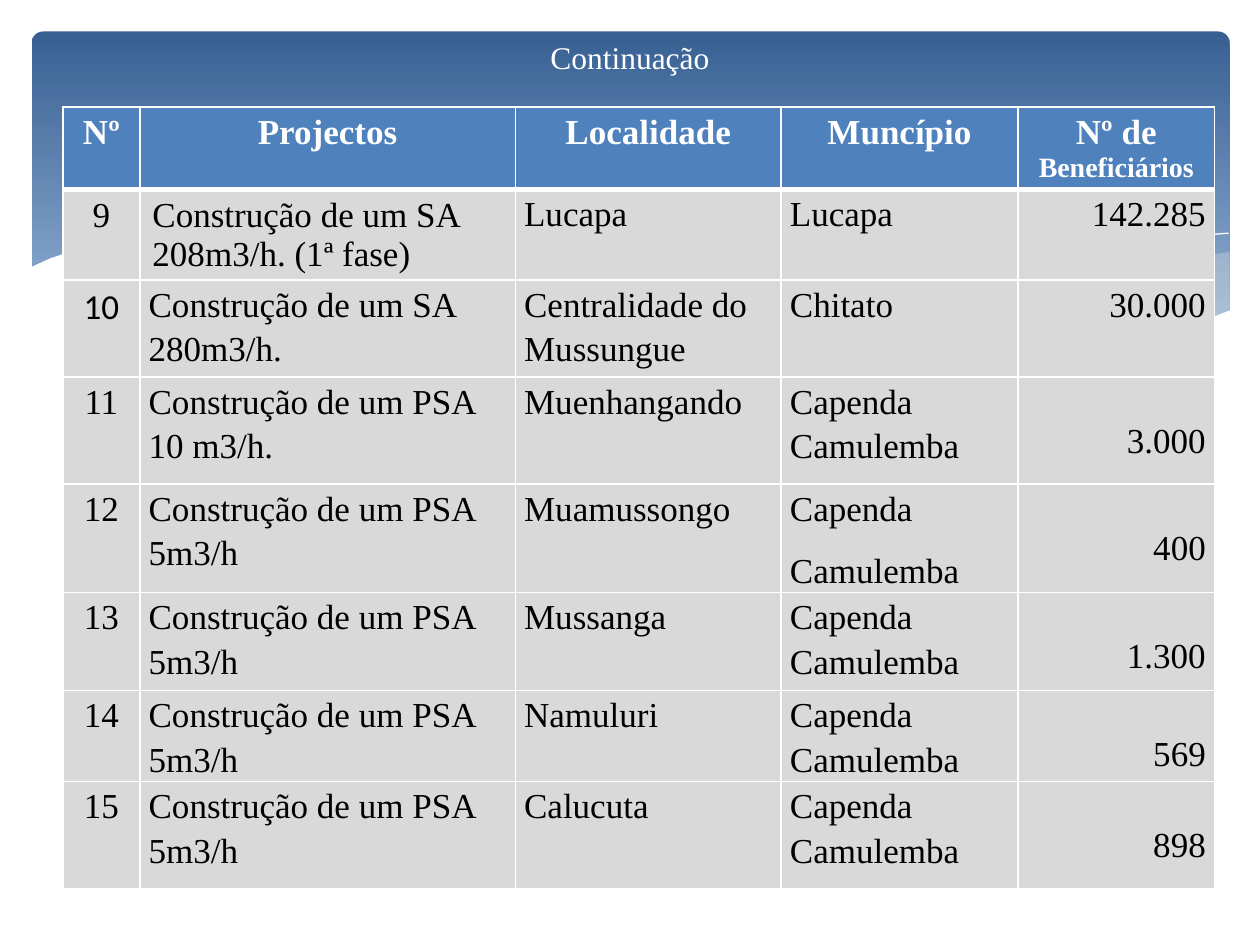
from dataclasses import dataclass

from lxml import etree
from pptx import Presentation
from pptx.dml.color import RGBColor
from pptx.enum.shapes import MSO_SHAPE
from pptx.enum.text import MSO_ANCHOR, PP_ALIGN
from pptx.oxml.ns import qn
from pptx.util import Inches, Pt

ROUND = MSO_SHAPE.ROUNDED_RECTANGLE
TOP = MSO_ANCHOR.TOP
LEFT, MID, RIGHT, JUST = PP_ALIGN.LEFT, PP_ALIGN.CENTER, PP_ALIGN.RIGHT, PP_ALIGN.JUSTIFY

WHITE = RGBColor(0xFF, 0xFF, 0xFF)
BLACK = RGBColor(0, 0, 0)
NAVY = RGBColor(0x37, 0x60, 0x92)
SKY = RGBColor(0x95, 0xB3, 0xD7)
BLUE = RGBColor(0x4F, 0x81, 0xBD)
GRAY = RGBColor(0xD9, 0xD9, 0xD9)
CREAM = RGBColor(0xEE, 0xEC, 0xE1)
SERIF = "Times New Roman"


@dataclass
class Wave:
    points: list
    fill: RGBColor | None = None
    alpha: int = 100


@dataclass
class Work:
    code: str
    name: str
    place: str
    town: str
    count: str
    drop: float = 0.31
    font: str = SERIF
    gap: int = 0


WAVES = [
    Wave([(9.75, 2), (9.48, 2.04), (9.21, 2.1), (8.91, 2.16), (8.61, 2.23), (8.05, 2.37),
          (7.53, 2.48), (7.06, 2.57), (6.61, 2.65), (6.91, 2.69), (7.19, 2.72), (7.45, 2.75),
          (7.69, 2.77), (8.03, 2.78), (8.35, 2.77), (8.63, 2.75), (8.89, 2.72), (9.13, 2.67),
          (9.35, 2.62), (9.49, 2.57), (9.63, 2.52), (9.76, 2.47), (9.76, 2)], CREAM, 29),
    Wave([(8.93, 2.73), (8.66, 2.69), (8.37, 2.65), (8.07, 2.6), (7.75, 2.54), (7.41, 2.47),
          (7.06, 2.4), (6.68, 2.31), (6.29, 2.22), (5.98, 2.14), (5.69, 2.08), (5.41, 2.03),
          (5.14, 1.98), (4.89, 1.94), (4.42, 1.89), (3.99, 1.86), (3.61, 1.85), (3.28, 1.87),
          (2.86, 1.91), (3.23, 1.96), (3.62, 2.03), (4.04, 2.11), (4.49, 2.22), (4.91, 2.32),
          (5.3, 2.4), (5.66, 2.48), (6.01, 2.55), (6.34, 2.61), (6.65, 2.66), (6.95, 2.7),
          (7.22, 2.74), (7.48, 2.76), (7.73, 2.77), (8.07, 2.78), (8.38, 2.78), (8.67, 2.76)],
         CREAM, 40),
    Wave([(3.09, 1.95), (3.28, 1.92), (3.53, 1.89), (3.87, 1.87), (4.33, 1.87), (4.69, 1.89),
          (5.1, 1.92), (5.56, 1.97), (6.08, 2.04), (6.65, 2.13), (7.27, 2.26), (7.95, 2.41),
          (8.69, 2.61), (9.07, 2.72)]),
    Wave([(6.13, 2.57), (6.53, 2.46), (6.95, 2.35), (7.48, 2.23), (8.06, 2.1), (8.66, 1.99),
          (8.95, 1.94), (9.24, 1.9), (9.51, 1.87), (9.75, 1.85)]),
    Wave([(9.77, 2.46), (9.59, 2.53), (9.4, 2.59), (9.2, 2.65), (8.99, 2.69), (8.75, 2.73),
          (8.5, 2.75), (8.09, 2.77), (7.78, 2.76), (7.44, 2.74), (7.08, 2.7), (6.68, 2.65),
          (6.26, 2.58), (5.79, 2.5), (5.29, 2.39), (4.75, 2.27), (4.18, 2.13), (3.65, 2.02),
          (3.16, 1.94), (2.71, 1.88), (2.3, 1.85), (1.93, 1.84), (1.61, 1.84), (1.32, 1.86),
          (1.06, 1.89), (0.85, 1.93), (0.67, 1.97), (0.52, 2.01), (0.4, 2.05), (0.29, 2.1),
          (0.23, 2.13), (0.23, 3.29), (9.77, 3.29)], WHITE),
]

HEADS = [[("Nº", 20)], [("Projectos", 20)], [("Localidade", 20)], [("Muncípio", 20)],
         [("Nº de ", 20), ("Beneficiários", 16)]]
PSA = "Construção de um PSA 5m3/h"
CAPENDA = "Capenda Camulemba"
WORKS = [
    Work("9", "Construção de um SA 208m3/h. (1ª fase)", "Lucapa", "Lucapa", "142.285", 0),
    Work("10", "Construção de um SA 280m3/h.", "Centralidade do\nMussungue", "Chitato",
         "30.000", 0, "Calibri"),
    Work("11", "Construção de um PSA 10 m3/h.", "Muenhangando", CAPENDA, "3.000"),
    Work("12", PSA, "Muamussongo", "Capenda\nCamulemba", "400", gap=10),
    Work("13", PSA, "Mussanga", CAPENDA, "1.300"),
    Work("14", PSA, "Namuluri", CAPENDA, "569"),
    Work("15", PSA, "Calucuta", CAPENDA, "898"),
]
COLS = [0.61, 2.98, 2.11, 1.88, 1.56]
ROWS = [0.65, 0.67, 0.77, 0.85, 0.86, 0.78, 0.72, 0.85]


def add_panel(shapes) -> None:
    panel = shapes.add_shape(ROUND, Inches(0.25), Inches(0.25), Inches(9.51), Inches(2.7))
    panel.adjustments[0] = 0.034
    panel.shadow.inherit = False
    panel.line.fill.background()
    panel.fill.gradient()
    panel.fill.gradient_angle = 270
    for stop, color, place in zip(panel.fill.gradient_stops, (NAVY, SKY), (0, 0.9)):
        stop.color.rgb = color
        stop.position = place


def add_wave(shapes, wave: Wave) -> None:
    dots = [(Inches(x), Inches(y)) for x, y in wave.points]
    pen = shapes.build_freeform(*dots[0], scale=1.0)
    pen.add_line_segments(dots[1:], close=wave.fill is not None)
    shape = pen.convert_to_shape()
    shape.shadow.inherit = False
    if wave.fill is None:
        shape.fill.background()
        shape.line.color.rgb = WHITE
        shape.line.width = Pt(0)
        return
    shape.line.fill.background()
    shape.fill.solid()
    shape.fill.fore_color.rgb = wave.fill
    if wave.alpha < 100:
        tint = shape.element.spPr.find(qn("a:solidFill"))[0]
        etree.SubElement(tint, qn("a:alpha"), val=str(wave.alpha * 1000))


def add_run(para, text: str, size: int, color: RGBColor, font: str = SERIF,
            bold: bool = False) -> None:
    run = para.add_run()
    run.text = text
    run.font.size = Pt(size)
    run.font.name = font
    run.font.bold = bold
    run.font.color.rgb = color


def paint(cell, color: RGBColor, top: int, low: int) -> None:
    props = cell._tc.get_or_add_tcPr()
    for side, width in (("L", 1), ("R", 1), ("T", top), ("B", low)):
        edge = etree.SubElement(props, qn("a:ln" + side), w=str(Pt(width)))
        fill = etree.SubElement(edge, qn("a:solidFill"))
        etree.SubElement(fill, qn("a:srgbClr"), val=str(WHITE))
    cell.fill.solid()
    cell.fill.fore_color.rgb = color


def fill_cell(cell, text: str, align, font: str, drop: float, gap: int, loose: bool) -> None:
    if loose:
        cell.margin_left = cell.margin_right = Inches(0.07)
        cell.margin_top, cell.margin_bottom = Inches(drop), 0
    lines = text.split("\n")
    for i, line in enumerate(lines):
        para = cell.text_frame.paragraphs[0] if i == 0 else cell.text_frame.add_paragraph()
        para.alignment = align
        if loose:
            para.line_spacing = 1.15
        if gap and i < len(lines) - 1:
            para.space_after = Pt(gap)
        add_run(para, line, 20, BLACK, font)


def add_grid(shapes) -> None:
    frame = shapes.add_table(len(ROWS), len(COLS), Inches(0.5), Inches(0.85),
                             Inches(sum(COLS)), Inches(sum(ROWS)))
    grid = frame.table
    grid.horz_banding = False
    for col, width in zip(grid.columns, COLS):
        col.width = Inches(width)
    for row, height in zip(grid.rows, ROWS):
        row.height = Inches(height)
    for c, parts in enumerate(HEADS):
        cell = grid.cell(0, c)
        paint(cell, BLUE, 1, 3)
        para = cell.text_frame.paragraphs[0]
        para.alignment = MID
        for text, size in parts:
            add_run(para, text, size, WHITE, bold=True)
    for r, work in enumerate(WORKS, 1):
        texts = (work.code, work.name, work.place, work.town, work.count)
        for c, (text, align) in enumerate(zip(texts, (MID, LEFT, JUST, JUST, RIGHT))):
            cell = grid.cell(r, c)
            paint(cell, GRAY, 3 if r == 1 else 1, 1)
            loose = c > 1 or r > 2 or (r, c) == (2, 1)
            fill_cell(cell, text, align, work.font if c == 0 else SERIF,
                      work.drop if c == 4 else 0, work.gap, loose)


def add_title(shapes) -> None:
    title = shapes.title
    title.left, title.top = Inches(0.5), Inches(0.3)
    title.width, title.height = Inches(9), Inches(0.55)
    frame = title.text_frame
    frame.vertical_anchor = TOP
    frame.margin_top = frame.margin_bottom = 0
    para = frame.paragraphs[0]
    para.alignment = MID
    add_run(para, "Continuação", 18, WHITE)
    shapes.element.append(title.element)


def main() -> None:
    deck = Presentation()
    deck.slide_width, deck.slide_height = Inches(10), Inches(7.5)
    shapes = deck.slides.add_slide(deck.slide_layouts[5]).shapes
    add_panel(shapes)
    for wave in WAVES:
        add_wave(shapes, wave)
    add_grid(shapes)
    add_title(shapes)
    deck.save("out.pptx")


if __name__ == "__main__":
    main()
